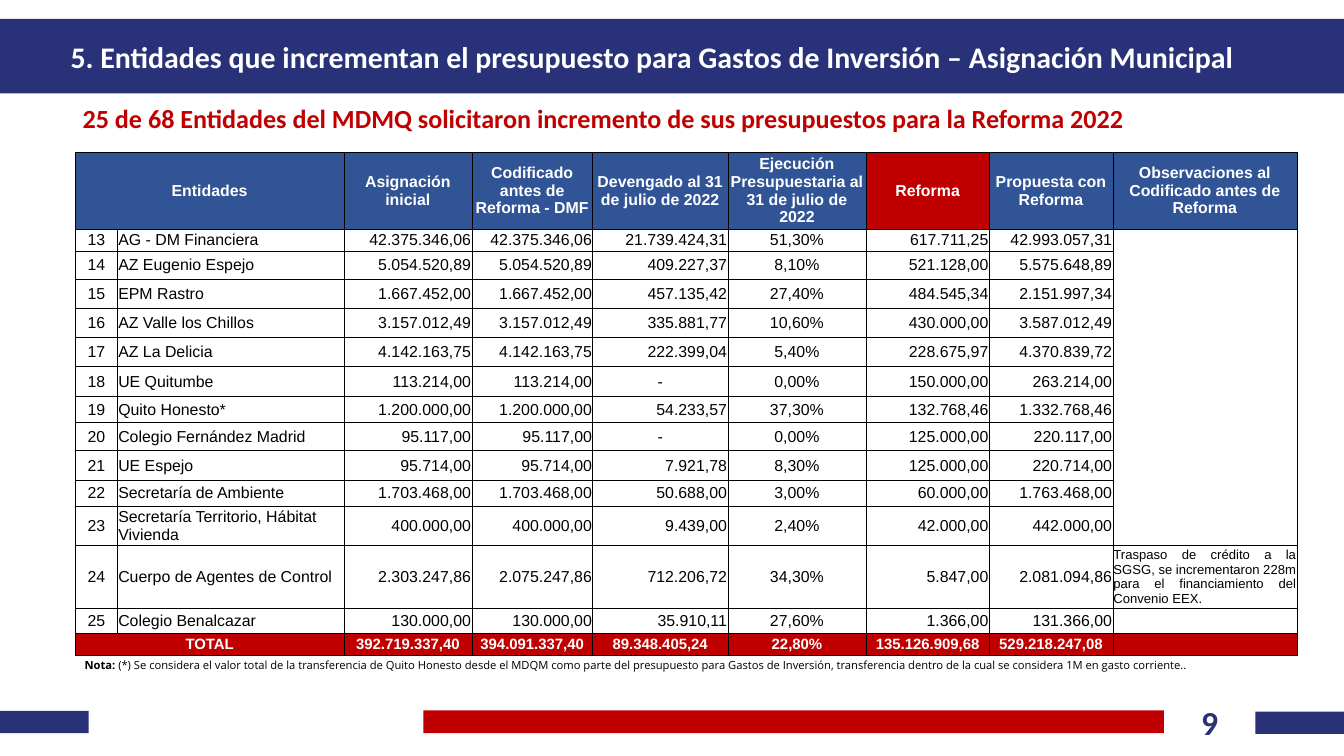
from lxml.etree import SubElement
from pptx import Presentation
from pptx.dml.color import RGBColor
from pptx.enum.shapes import MSO_SHAPE as Shape
from pptx.enum.text import MSO_ANCHOR as Anchor, MSO_AUTO_SIZE as AutoSize, PP_ALIGN as Align
from pptx.oxml.ns import qn
from pptx.util import Pt

EMU_PER_PX = 9144  # 100 px to the inch
SLIDE_WIDTH, SLIDE_HEIGHT = 2000, 1125
COLORS = {
    "navy": "293279",
    "blue": "305496",
    "red": "C00000",
    "white": "FFFFFF",
    "black": "000000",
}
ALIGNS = {"l": Align.LEFT, "c": Align.CENTER, "r": Align.RIGHT, "j": Align.JUSTIFY}

COLUMN_WIDTHS = [63, 337, 190, 180, 201, 206, 183, 184, 274]
ROW_HEIGHTS = [104, 33, 42, 43, 43, 43, 46, 38, 42, 44, 39, 32, 32, 37, 33]
COLUMN_ALIGNS = "clrrrcrrj"
REFORM_COLUMN = 6
NOTE_COLUMN = 8
FIRST_NUMBER = 13
HEADERS = [
    "Entidades", "", "Asignación inicial", "Codificado antes de Reforma - DMF",
    "Devengado al 31 de julio de 2022", "Ejecución Presupuestaria al 31 de julio de 2022",
    "Reforma", "Propuesta con Reforma", "Observaciones al Codificado antes de Reforma",
]
ENTITIES = [
    ("AG - DM Financiera", "42.375.346,06", "42.375.346,06", "21.739.424,31", "51,30%", "617.711,25", "42.993.057,31"),
    ("AZ Eugenio Espejo", "5.054.520,89", "5.054.520,89", "409.227,37", "8,10%", "521.128,00", "5.575.648,89"),
    ("EPM Rastro", "1.667.452,00", "1.667.452,00", "457.135,42", "27,40%", "484.545,34", "2.151.997,34"),
    ("AZ Valle los Chillos", "3.157.012,49", "3.157.012,49", "335.881,77", "10,60%", "430.000,00", "3.587.012,49"),
    ("AZ La Delicia", "4.142.163,75", "4.142.163,75", "222.399,04", "5,40%", "228.675,97", "4.370.839,72"),
    ("UE Quitumbe", "113.214,00", "113.214,00", "-", "0,00%", "150.000,00", "263.214,00"),
    ("Quito Honesto*", "1.200.000,00", "1.200.000,00", "54.233,57", "37,30%", "132.768,46", "1.332.768,46"),
    ("Colegio Fernández Madrid", "95.117,00", "95.117,00", "-", "0,00%", "125.000,00", "220.117,00"),
    ("UE Espejo", "95.714,00", "95.714,00", "7.921,78", "8,30%", "125.000,00", "220.714,00"),
    ("Secretaría de Ambiente", "1.703.468,00", "1.703.468,00", "50.688,00", "3,00%", "60.000,00", "1.763.468,00"),
    ("Secretaría Territorio, Hábitat Vivienda", "400.000,00", "400.000,00", "9.439,00", "2,40%", "42.000,00", "442.000,00"),
    ("Cuerpo de Agentes de Control", "2.303.247,86", "2.075.247,86", "712.206,72", "34,30%", "5.847,00", "2.081.094,86"),
    ("Colegio Benalcazar", "130.000,00", "130.000,00", "35.910,11", "27,60%", "1.366,00", "131.366,00"),
]
REMARKS = {
    24: "Traspaso de crédito a la SGSG, se incrementaron 228m para el financiamiento del Convenio EEX.",
}
TOTALS = [
    "TOTAL", "", "392.719.337,40", "394.091.337,40", "89.348.405,24", "22,80%",
    "135.126.909,68", "529.218.247,08", "",
]


def px(length):
    return length * EMU_PER_PX


def rgb(name):
    return RGBColor.from_string(COLORS[name])


def set_attributes(target, values):
    for name, value in values.items():
        setattr(target, name, value)


def add_run(paragraph, text, font, size, color, bold):
    run = paragraph.add_run()
    run.text = text
    set_attributes(run.font, {"name": font, "size": Pt(size), "bold": bold})
    run.font.color.rgb = rgb(color)


def add_bar(slide, box, color):
    bar = slide.shapes.add_shape(Shape.RECTANGLE, *map(px, box))
    bar.shadow.inherit = False
    bar.fill.solid()
    bar.fill.fore_color.rgb = rgb(color)
    bar.line.fill.background()


def add_text(slide, box, runs, align="l", padding=(10, 5), **frame_values):
    """Each run is (text, font, size, color, bold)."""
    frame = slide.shapes.add_textbox(*map(px, box)).text_frame
    side, edge = map(px, padding)
    set_attributes(frame, {
        "word_wrap": True, "margin_left": side, "margin_right": side,
        "margin_top": edge, "margin_bottom": edge, **frame_values,
    })
    paragraph = frame.paragraphs[0]
    paragraph.alignment = ALIGNS[align]
    for run in runs:
        add_run(paragraph, *run)


def add_header(slide, left, top, width, height):
    add_bar(slide, (left, top, width, height), "navy")
    title = "5. Entidades que incrementan el presupuesto para Gastos de Inversión – Asignación Municipal"
    add_text(slide, (left + 87, top, 1776, height), [(title, "Calibri", 32, "white", True)],
             padding=(18, 9), vertical_anchor=Anchor.MIDDLE)
    subtitle = "25 de 68 Entidades del MDMQ solicitaron incremento de sus presupuestos para la Reforma 2022"
    add_text(slide, (left + 105, top + height, 1815, 73), [(subtitle, "Calibri", 28, "red", True)],
             padding=(18, 9), vertical_anchor=Anchor.MIDDLE)


def add_footer(slide, left, top, width):
    add_bar(slide, (left + 630, top + 17, 1102, 34), "red")
    add_bar(slide, (left, top + 18, 132, 33), "navy")
    add_bar(slide, (left + width - 132, top + 19, 132, 33), "navy")
    add_text(slide, (left + 1732, top, 136, 71), [("9", "Calibri", 36, "navy", True)],
             align="c", auto_size=AutoSize.SHAPE_TO_FIT_TEXT)


def add_borders(cell):
    properties = cell._tc.get_or_add_tcPr()
    for side in ("a:lnL", "a:lnR", "a:lnT", "a:lnB"):
        line = SubElement(properties, qn(side), w=str(Pt(0.5)))
        fill = SubElement(line, qn("a:solidFill"))
        SubElement(fill, qn("a:srgbClr"), val=COLORS["black"])


def format_cell(cell, text, align, fill, size, color, bold):
    add_borders(cell)
    cell.fill.solid()
    cell.fill.fore_color.rgb = rgb(fill)
    set_attributes(cell, {
        "margin_left": px(1), "margin_right": px(1), "margin_top": px(1),
        "margin_bottom": 0, "vertical_anchor": Anchor.MIDDLE,
    })
    paragraph = cell.text_frame.paragraphs[0]
    paragraph.alignment = ALIGNS[align]
    add_run(paragraph, text, "Arial", size, color, bold)


def add_budget_table(slide, left, top):
    body = [(str(number), *values, REMARKS.get(number, ""))
            for number, values in enumerate(ENTITIES, FIRST_NUMBER)]
    rows = [HEADERS, *body, TOTALS]
    last = len(rows) - 1
    box = (left, top, sum(COLUMN_WIDTHS), sum(ROW_HEIGHTS))
    table = slide.shapes.add_table(len(rows), len(COLUMN_WIDTHS), *map(px, box)).table
    set_attributes(table, {"first_row": False, "horz_banding": False})
    for column, width in zip(table.columns, COLUMN_WIDTHS):
        column.width = px(width)
    for row, height in zip(table.rows, ROW_HEIGHTS):
        row.height = px(height)

    # Joined cells
    for row_index in (0, last):
        table.cell(row_index, 0).merge(table.cell(row_index, 1))
    table.cell(1, NOTE_COLUMN).merge(table.cell(11, NOTE_COLUMN))

    # Header, entities and total
    for row_index, row in enumerate(rows):
        for column_index, text in enumerate(row):
            if row_index == 0:
                fill = "red" if column_index == REFORM_COLUMN else "blue"
                style = ("c", fill, 17, "white", True)
            elif row_index == last:
                style = ("c", "red", 16, "white", True)
            else:
                align = "c" if text == "-" else COLUMN_ALIGNS[column_index]
                size = 14 if column_index == NOTE_COLUMN else 17
                style = (align, "white", size, "black", False)
            format_cell(table.cell(row_index, column_index), text, *style)


def add_note(slide, left, top, width, height):
    note = ("(*) Se considera el valor total de la transferencia de Quito Honesto desde el MDQM como parte "
            "del presupuesto para Gastos de Inversión, transferencia dentro de la cual se considera 1M en "
            "gasto corriente..")
    add_text(slide, (left, top, width, height),
             [("Nota: ", "Open Sans", 12, "black", True), (note, "Open Sans", 12, "black", False)],
             align="j", auto_size=AutoSize.SHAPE_TO_FIT_TEXT)


def main():
    presentation = Presentation()
    set_attributes(presentation, {"slide_width": px(SLIDE_WIDTH), "slide_height": px(SLIDE_HEIGHT)})
    slide = presentation.slides.add_slide(presentation.slide_layouts[6])
    add_footer(slide, 0, 1040, SLIDE_WIDTH)
    add_header(slide, 0, 28, SLIDE_WIDTH, 111)
    add_note(slide, 116, 974, 1747, 30)
    add_budget_table(slide, 112, 226)
    presentation.save("out.pptx")


if __name__ == "__main__":
    main()
